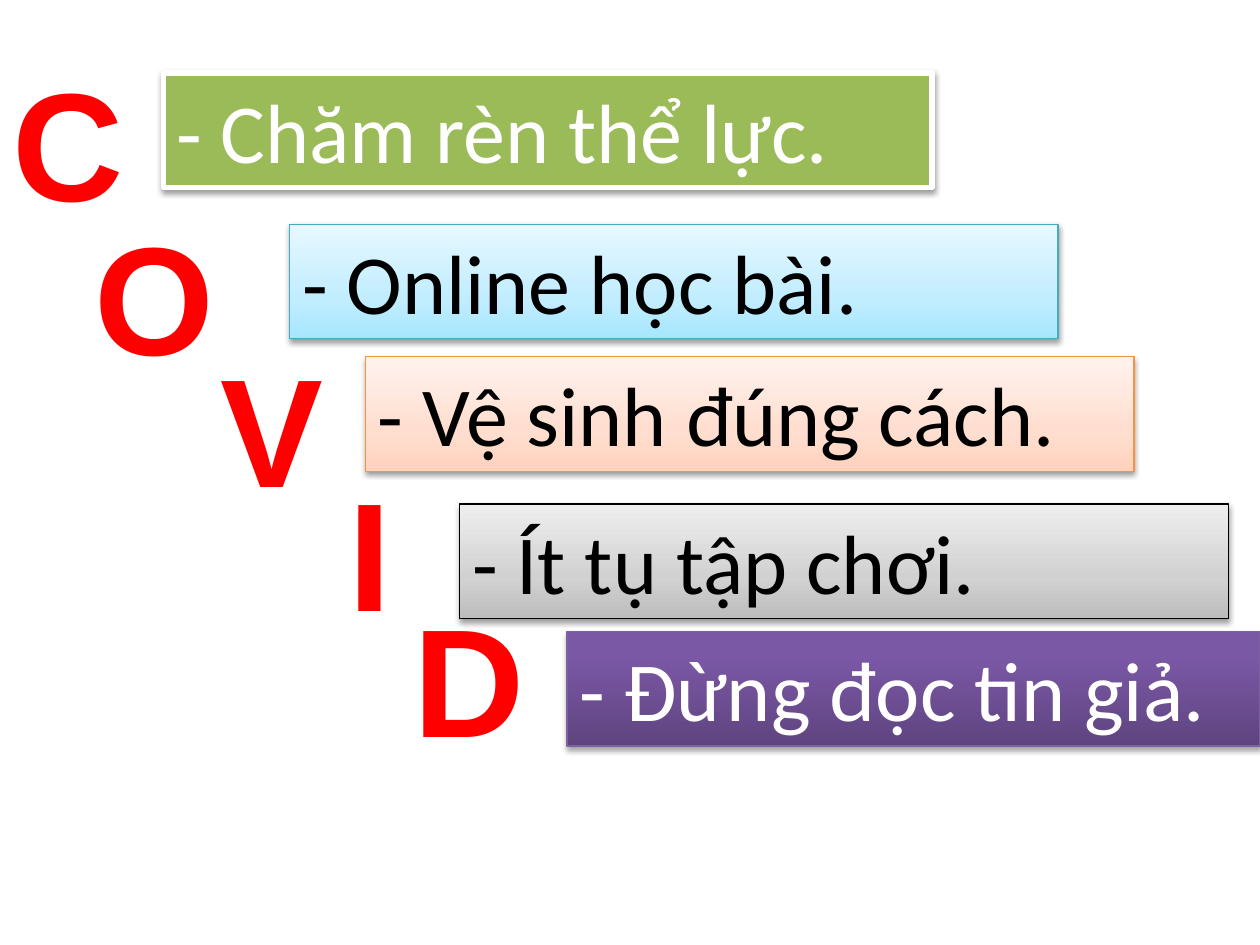
from lxml import etree
from pptx import Presentation
from pptx.dml.color import RGBColor
from pptx.enum.shapes import MSO_SHAPE as Shape
from pptx.enum.text import MSO_ANCHOR as Anchor, PP_ALIGN as Align
from pptx.oxml.ns import qn
from pptx.util import Cm, Pt

RED = RGBColor(0xFF, 0x00, 0x00)
WHITE = RGBColor(0xFF, 0xFF, 0xFF)
BLACK = RGBColor(0x00, 0x00, 0x00)
GREEN = RGBColor(0x9B, 0xBB, 0x59)
TEAL = RGBColor(0x46, 0xAA, 0xC5)
ORANGE = RGBColor(0xF6, 0x92, 0x40)
VIOLET = RGBColor(0x7D, 0x60, 0xA0)

# Gradients run from bottom to top: (position in percent, colour)
BLUES = [(0, RGBColor(0xA7, 0xE6, 0xFF)), (35, RGBColor(0xC1, 0xED, 0xFF)),
         (100, RGBColor(0xE7, 0xF8, 0xFF))]
PEACHES = [(0, RGBColor(0xFF, 0xD2, 0xBD)), (35, RGBColor(0xFF, 0xDE, 0xD0)),
           (100, RGBColor(0xFF, 0xF2, 0xED))]
GREYS = [(0, RGBColor(0xBD, 0xBD, 0xBD)), (35, RGBColor(0xD1, 0xD1, 0xD1)),
         (100, RGBColor(0xEE, 0xEE, 0xEE))]
PURPLES = [(0, RGBColor(0x5F, 0x44, 0x80)), (80, RGBColor(0x7B, 0x58, 0xA6)),
           (100, RGBColor(0x7C, 0x57, 0xA8))]

# Letter, left, top
LETTERS = [("C", 0, 0.84), ("O", 1.65, 3.94), ("V", 4.19, 6.6),
           ("I", 6.78, 9.09), ("D", 8.08, 11.63)]

# Text, left, top, width, fill, line colour, line points, text colour,
# shadow opacity in percent, shadow distance in points
BARS = [
    ("- Chăm rèn thể lực.", 3.3, 1.47, 15.49, GREEN, WHITE, 3, WHITE, 38, 1.6),
    ("- Online học bài.", 5.84, 4.52, 15.49, BLUES, TEAL, 0.75, BLACK, 38, 1.6),
    ("- Vệ sinh đúng cách.", 7.37, 7.19, 15.49, PEACHES, ORANGE, 0.75, BLACK, 38, 1.6),
    ("- Ít tụ tập chơi.", 9.27, 10.16, 15.49, GREYS, BLACK, 0.75, BLACK, 38, 1.6),
    ("- Đừng đọc tin giả.", 11.43, 12.73, 13.97, PURPLES, VIOLET, 0.75, WHITE, 35, 1.8),
]


def write(sp, text, font_name, size, color, bold=False):
    tf = sp.text_frame
    tf.word_wrap = True
    tf.vertical_anchor = Anchor.TOP
    p = tf.paragraphs[0]
    p.text = text
    p.alignment = Align.LEFT
    font = p.font
    font.name, font.size, font.bold = font_name, Pt(size), bold
    font.color.rgb = color


def add_color(parent, color):
    return etree.SubElement(parent, qn("a:srgbClr"), val=str(color))


def fill_gradient(sp, stops):
    sp.fill.gradient()
    sp.fill.gradient_angle = 90
    gs_list = next(sp._element.spPr.iter(qn("a:gsLst")))
    for gs in list(gs_list):
        gs_list.remove(gs)
    for percent, color in stops:
        gs = etree.SubElement(gs_list, qn("a:gs"), pos=str(percent * 1000))
        add_color(gs, color)


def add_shadow(sp, opacity, distance):
    sp.shadow.inherit = False
    effects = sp._element.spPr.find(qn("a:effectLst"))
    shadow = etree.SubElement(effects, qn("a:outerShdw"), blurRad=str(Pt(3.1)),
                              dist=str(Pt(distance)), dir="5400000", rotWithShape="0")
    etree.SubElement(add_color(shadow, BLACK), qn("a:alpha"), val=str(opacity * 1000))


def add_letter(s, letter, left, top):
    sp = s.shapes.add_textbox(Cm(left), Cm(top), Cm(2.11), Cm(4.01))
    write(sp, letter, "Arial", 88, RED, bold=True)


def add_bar(s, text, left, top, width, fill, line, line_width, color, opacity, distance):
    sp = s.shapes.add_shape(Shape.RECTANGLE, Cm(left), Cm(top), Cm(width), Cm(2.31))
    if isinstance(fill, RGBColor):
        sp.fill.solid()
        sp.fill.fore_color.rgb = fill
    else:
        fill_gradient(sp, fill)
    sp.line.color.rgb = line
    sp.line.width = Pt(line_width)
    add_shadow(sp, opacity, distance)
    write(sp, text, "Calibri", 48, color)


def main():
    prs = Presentation()
    prs.slide_width, prs.slide_height = Cm(25.4), Cm(19.05)
    s = prs.slides.add_slide(prs.slide_layouts[6])

    # Acrostic letters stepping down to the right
    for letter in LETTERS:
        add_letter(s, *letter)

    # One message bar for each letter
    for bar in BARS:
        add_bar(s, *bar)

    prs.save("out.pptx")


if __name__ == "__main__":
    main()
